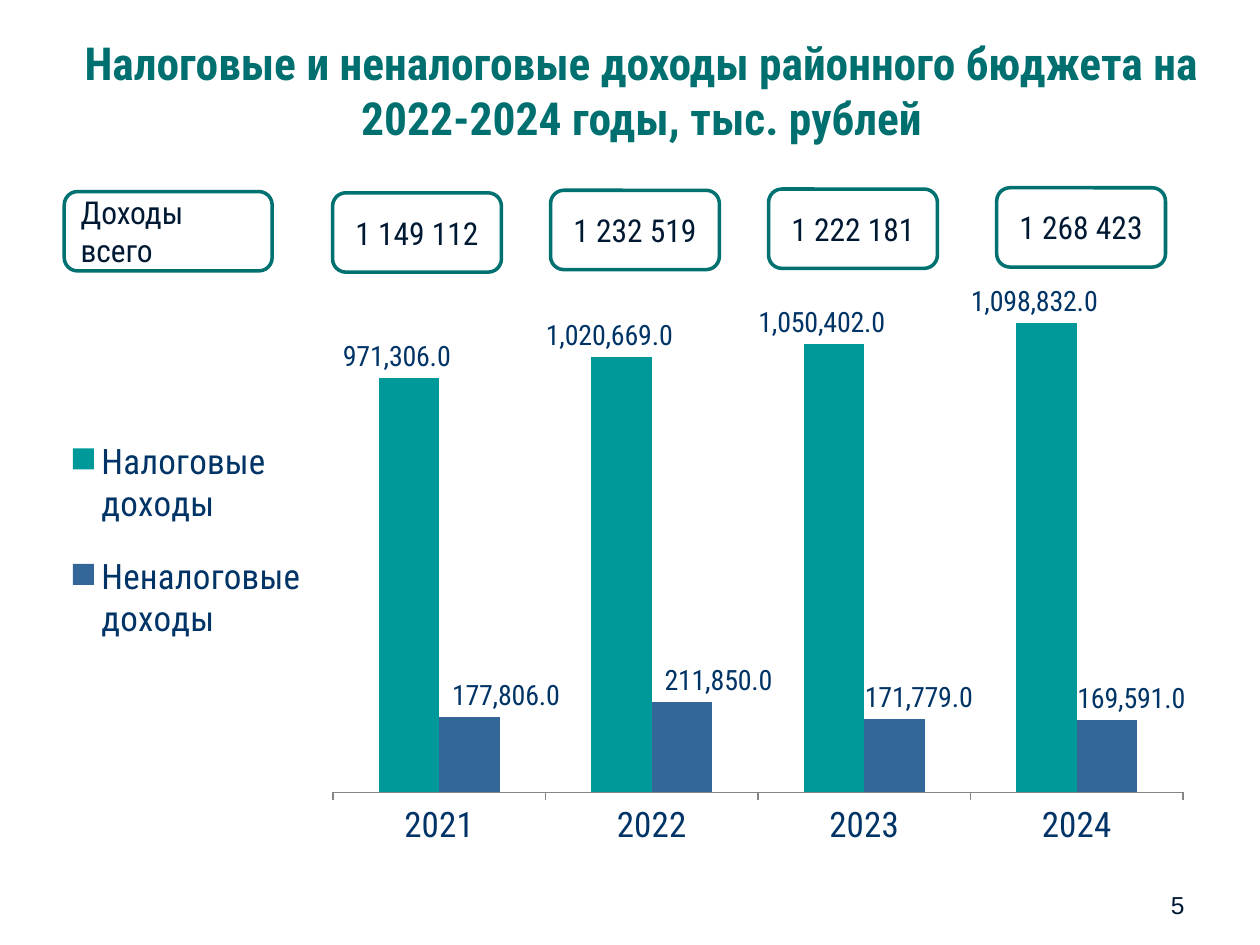
from lxml import etree
from pptx import Presentation
from pptx.chart.data import CategoryChartData
from pptx.dml.color import RGBColor
from pptx.enum.chart import XL_CHART_TYPE, XL_LABEL_POSITION, XL_LEGEND_POSITION, XL_TICK_MARK
from pptx.enum.shapes import MSO_SHAPE
from pptx.enum.text import MSO_ANCHOR, PP_ALIGN
from pptx.oxml.ns import qn
from pptx.util import Inches, Pt

COLORS = {
    "title": "006F6F", "ink": "001933", "chart": "003366", "border": "007171",
    "card": "FFFFFF", "tax": "009999", "nontax": "336699", "axis": "868686",
}
FONT = "Roboto Condensed"
YEARS = ["2021", "2022", "2023", "2024"]
SERIES = [
    ("Налоговые доходы", [971306, 1020669, 1050402, 1098832], "tax",
     [-0.01] * 4),
    ("Неналоговые доходы", [177806, 211850, 171779, 169591], "nontax",
     [0.03, 0.03, 0.02, 0.02]),
]
CARDS = [
    ("Доходы всего", 0, 3, 18.88, PP_ALIGN.LEFT),
    ("1 149 112", 24.37, 4, 15.33, PP_ALIGN.CENTER),
    ("1 232 519", 44.16, 2, 15.33, PP_ALIGN.CENTER),
    ("1 222 181", 63.96, 1, 15.33, PP_ALIGN.CENTER),
    ("1 268 423", 84.67, 0, 15.33, PP_ALIGN.CENTER),
]


def rgb(name):
    return RGBColor.from_string(COLORS[name])


def share(box, x, y, w, h):
    left, top, width, height = box
    return (int(left + width * x / 100), int(top + height * y / 100),
            int(width * w / 100), int(height * h / 100))


def style_font(font, size, color, name=FONT, bold=False):
    font.size, font.name, font.bold = Pt(size), name, bold
    font.color.rgb = rgb(color)


def write(sp, text, size, color, align, anchor=MSO_ANCHOR.MIDDLE, **style):
    tf = sp.text_frame
    tf.word_wrap = True
    tf.vertical_anchor = anchor
    p = tf.paragraphs[0]
    p.alignment = align
    r = p.add_run()
    r.text = text
    style_font(r.font, size, color, **style)


def add_title(s, box):
    write(s.shapes.add_textbox(*box),
          "Налоговые и неналоговые доходы районного бюджета на 2022-2024 годы, тыс. рублей",
          26, "title", PP_ALIGN.CENTER, bold=True)


def add_totals(s, box):
    step = 1.5
    for text, x, rise, w, align in CARDS:
        sp = s.shapes.add_shape(MSO_SHAPE.ROUNDED_RECTANGLE,
                                *share(box, x, rise * step, w, 94))
        sp.shadow.inherit = False
        sp.fill.solid()
        sp.fill.fore_color.rgb = rgb("card")
        sp.line.color.rgb = rgb("border")
        sp.line.width = Pt(2)
        write(sp, text, 18, "ink", align)


def manual_layout(parent, after, **values):
    for old in parent.findall(qn("c:layout")):
        parent.remove(old)
    layout = etree.Element(qn("c:layout"))
    manual = etree.SubElement(layout, qn("c:manualLayout"))
    for tag, val in values.items():
        etree.SubElement(manual, qn(f"c:{tag}")).set("val", str(val))
    if after is None:
        parent.insert(0, layout)
    else:
        after.addnext(layout)


def style_series(ser, color, shifts):
    ser.format.fill.solid()
    ser.format.fill.fore_color.rgb = rgb(color)
    ser.invert_if_negative = False
    labels = ser.data_labels
    labels.show_value = True
    labels.number_format = "#,##0.0"
    labels.number_format_is_linked = False
    labels.position = XL_LABEL_POSITION.OUTSIDE_END
    style_font(labels.font, 16, "chart")
    for i in range(len(shifts)):
        label = ser.points[i].data_label
        label.position = XL_LABEL_POSITION.OUTSIDE_END
        style_font(label.font, 16, "chart")
    for dlbl, shift in zip(ser._element.iter(qn("c:dLbl")), shifts):
        manual_layout(dlbl, dlbl.find(qn("c:idx")), x=shift, y=0)


def add_income_chart(s, box):
    data = CategoryChartData(number_format="#,##0.0")
    data.categories = YEARS
    for name, values, _, _ in SERIES:
        data.add_series(name, values)
    chart = s.shapes.add_chart(XL_CHART_TYPE.COLUMN_CLUSTERED, *box, data).chart
    style_font(chart.font, 18, "chart", name="Arial")
    chart.has_title = False

    plot = chart.plots[0]
    plot.gap_width, plot.overlap, plot.vary_by_categories = 150, 0, False
    for ser, (_, _, color, shifts) in zip(plot.series, SERIES):
        style_series(ser, color, shifts)

    axis = chart.category_axis
    axis.major_tick_mark = XL_TICK_MARK.OUTSIDE
    axis.format.line.color.rgb = rgb("axis")
    style_font(axis.tick_labels.font, 20, "chart")
    values = chart.value_axis
    values.minimum_scale, values.maximum_scale = 0, 1200000
    values.has_major_gridlines = False
    values.visible = False

    chart.has_legend = True
    legend = chart.legend
    legend.position = XL_LEGEND_POSITION.RIGHT
    legend.include_in_layout = False
    style_font(legend.font, 20, "chart")
    area = plot._element.getparent()
    manual_layout(area, None, layoutTarget="inner", xMode="edge", yMode="edge",
                  x=0.246, y=0.043, w=0.702, h=0.858)
    node = legend._element
    manual_layout(node, node.find(qn("c:legendPos")), xMode="edge", yMode="edge",
                  x=0.01, y=0.26, w=0.23, h=0.44)


def add_page_number(s, box):
    write(s.shapes.add_textbox(*box), "5", 14, "ink", PP_ALIGN.RIGHT,
          MSO_ANCHOR.BOTTOM, name="Arial")


def main():
    prs = Presentation()
    prs.slide_width, prs.slide_height = Inches(10), Inches(7.5)
    page = (0, 0, prs.slide_width, prs.slide_height)
    s = prs.slides.add_slide(prs.slide_layouts[6])
    add_title(s, share(page, 3.5, 3.73, 94.9, 11.6))
    add_income_chart(s, share(page, 2.8, 26.93, 96.1, 63.2))
    add_page_number(s, share(page, 71.7, 91.07, 23.3, 6.93))
    add_totals(s, share(page, 5.1, 19.87, 87.4, 8.93))
    prs.save("out.pptx")


if __name__ == "__main__":
    main()
